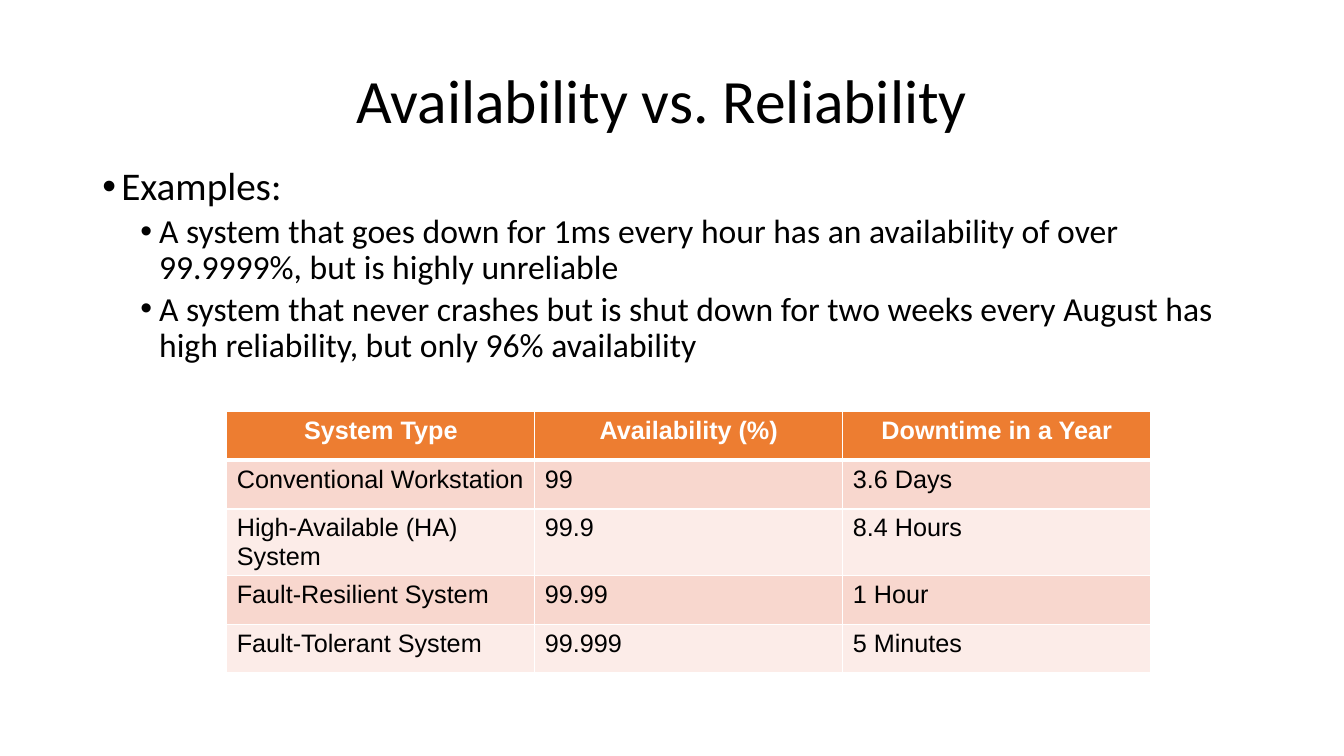
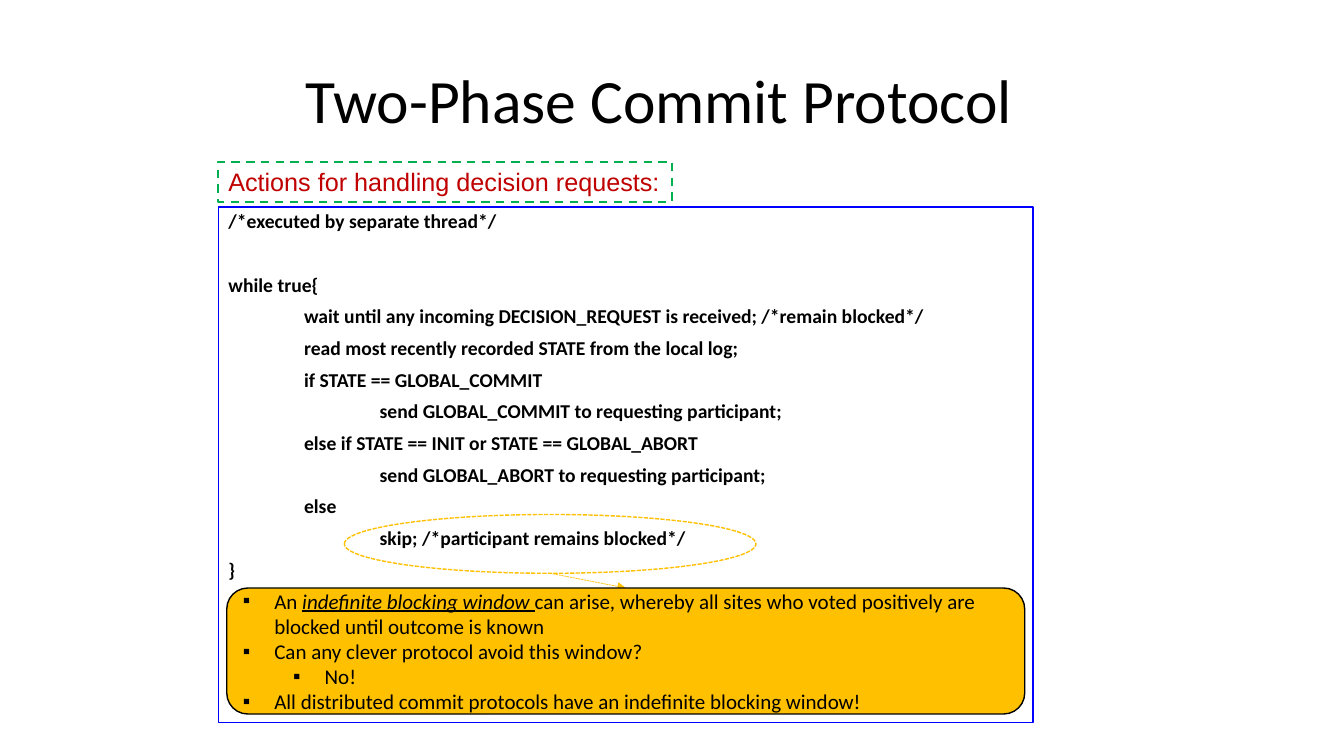
import lxml.etree
import pptx
import pptx.dml.color
import pptx.enum.dml
import pptx.enum.shapes
import pptx.enum.text
import pptx.oxml.ns
import pptx.util

PX = 9525  # EMU in one px: the slide is 1280 by 720
COLORS = {
    "text": "000000", "white": "FFFFFF", "header": "ED7D31",
    "band": "F8D7CE", "light band": "FCECE8", "frame": "0000FF",
    "label": "C00000", "label frame": "00B050", "highlight": "FFC000",
}
FONTS = {
    "title": {"name": "Calibri", "size": 44},
    "list": {"name": "Calibri", "size": 28},
    "sublist": {"name": "Calibri", "size": 24},
    "code": {"name": "Calibri", "size": 14, "bold": True},
    "callout": {"name": "Calibri", "size": 15},
    "label": {"name": "Arial", "size": 18, "color": "label"},
    "header": {"name": "Arial", "size": 18, "bold": True, "color": "white"},
    "cell": {"name": "Arial", "size": 18, "bold": False},
}
ALIGN = pptx.enum.text.PP_ALIGN
ANCHOR = pptx.enum.text.MSO_ANCHOR
FIT = pptx.enum.text.MSO_AUTO_SIZE
SHAPE = pptx.enum.shapes.MSO_SHAPE
DASH = pptx.enum.dml.MSO_LINE


def rgb(color):
    return pptx.dml.color.RGBColor.from_string(COLORS[color])


def add_xml(parent, tag, **attributes):
    return lxml.etree.SubElement(parent, pptx.oxml.ns.qn(tag), attributes)


def set_all(target, values):
    for name, value in values.items():
        setattr(target, name, value)


class Deck:
    """Holds the shared style and the slide being built."""

    def __init__(self):
        self.presentation = pptx.Presentation()
        self.presentation.slide_width = 1280 * PX
        self.presentation.slide_height = 720 * PX
        self.slide = None

    def place(self, shape, box):
        set_all(shape, {side: length * PX for side, length
                        in zip(("left", "top", "width", "height"), box)})

    def add_text(self, paragraph, runs, style, **extra):
        """Fill a paragraph with a string or with (text, format) pairs."""
        for text, changes in [(runs, {})] if isinstance(runs, str) else runs:
            run = paragraph.add_run()
            run.text = text
            font = {"color": "text", **FONTS[style], **changes}
            run.font.color.rgb = rgb(font.pop("color"))
            font["size"] = pptx.util.Pt(font["size"])
            set_all(run.font, font)
        set_all(paragraph, extra)

    def indent(self, paragraph, left, hang=0, bullet=None):
        properties = paragraph._p.get_or_add_pPr()
        properties.set("marL", str(left * PX))
        properties.set("indent", str(-hang * PX))
        if bullet:
            add_xml(properties, "a:buFont", typeface="Arial")
            add_xml(properties, "a:buChar", char=bullet)
        else:
            add_xml(properties, "a:buNone")

    def paragraphs(self, frame, items, styles, base, step, hang=0,
                   bullet=None, spacing=1.0, gaps=(0, 0), align=ALIGN.LEFT):
        """Add (level, runs[, gap]) items; styles and gaps go by level."""
        for number, (level, runs, *gap) in enumerate(items):
            paragraph = frame.add_paragraph() if number else frame.paragraphs[0]
            paragraph.level = level
            self.indent(paragraph, base + step * level, hang, bullet)
            before = (gap or [gaps[min(level, 1)]])[0] if number else 0
            self.add_text(paragraph, runs, styles[min(level, len(styles) - 1)],
                          alignment=align, line_spacing=spacing,
                          space_before=pptx.util.Pt(before))

    def start(self, title, left, width):
        layout = self.presentation.slide_layouts[1]
        self.slide = self.presentation.slides.add_slide(layout)
        heading = self.slide.shapes.title
        self.place(heading, (left, 29, width, 139))
        set_all(heading.text_frame, {"auto_size": FIT.NONE, "word_wrap": True,
                                     "vertical_anchor": ANCHOR.MIDDLE})
        self.add_text(heading.text_frame.paragraphs[0], title, "title",
                      alignment=ALIGN.CENTER, line_spacing=0.9)

    def body(self, box, items, styles, **layout):
        body = self.slide.placeholders[1]
        self.place(body, box)
        set_all(body.text_frame, {"auto_size": FIT.NONE, "word_wrap": True,
                                  "vertical_anchor": ANCHOR.TOP})
        self.paragraphs(body.text_frame, items, styles, spacing=0.9, **layout)
        return body

    def outline(self, line, color, weight, dash=None):
        line.color.rgb = rgb(color)
        set_all(line, {"width": pptx.util.Pt(weight), "dash_style": dash})

    def shape(self, kind, box, line, fill=None):
        shape = self.slide.shapes.add_shape(kind, *(n * PX for n in box))
        shape.shadow.inherit = False
        if fill:
            shape.fill.solid()
            shape.fill.fore_color.rgb = rgb(fill)
        else:
            shape.fill.background()
        self.outline(shape.line, *line)
        shape.text_frame.word_wrap = True
        return shape

    def arrow(self, start, end, line):
        arrow = self.slide.shapes.add_connector(
            pptx.enum.shapes.MSO_CONNECTOR.STRAIGHT,
            *(n * PX for n in start + end))
        self.outline(arrow.line, *line)
        properties = arrow._element.spPr
        add_xml(properties.find(pptx.oxml.ns.qn("a:ln")), "a:tailEnd",
                type="triangle")
        add_xml(properties, "a:effectLst")

    def borders(self, cell, bottom):
        properties = cell._tc.get_or_add_tcPr()
        for side, weight in zip("LRTB", (1, 1, 1, bottom)):
            border = add_xml(properties, f"a:ln{side}",
                             w=str(int(pptx.util.Pt(weight))))
            add_xml(add_xml(border, "a:solidFill"), "a:srgbClr",
                    val=COLORS["white"])

    def table(self, box, rows):
        table = self.slide.shapes.add_table(
            len(rows), len(rows[0]), *(n * PX for n in box)).table
        for r, row in enumerate(rows):
            header = r == 0
            fill = "header" if header else ("light band", "band")[r % 2]
            for c, text in enumerate(row):
                cell = table.cell(r, c)
                self.borders(cell, 3 if header else 1)
                cell.fill.solid()
                cell.fill.fore_color.rgb = rgb(fill)
                self.add_text(cell.text_frame.paragraphs[0], text,
                              "header" if header else "cell",
                              alignment=ALIGN.CENTER if header else ALIGN.LEFT)


def availability_slide(deck):
    deck.start("Availability vs. Reliability", 88, 1085)
    examples = [
        (0, "Examples:"),
        (1, "A system that goes down for 1ms every hour has an availability "
            "of over 99.9999%, but is highly unreliable"),
        (1, "A system that never crashes but is shut down for two weeks every "
            "August has high reliability, but only 96% availability"),
    ]
    deck.body((88, 154, 1085, 528), examples, ("list", "sublist"),
              base=18, step=36, hang=18, bullet="•", gaps=(7.5, 3.8))
    deck.table((216, 392, 880, 232), [
        ("System Type", "Availability (%)", "Downtime in a Year"),
        ("Conventional Workstation", "99", "3.6 Days"),
        ("High-Available (HA) System", "99.9", "8.4 Hours"),
        ("Fault-Resilient System", "99.99", "1 Hour"),
        ("Fault-Tolerant System", "99.999", "5 Minutes"),
    ])


def commit_slide(deck):
    deck.start("Two-Phase Commit Protocol", 184, 888)

    # Pseudocode: the level is the depth of nesting
    code = [
        (0, "/*executed by separate thread*/"),
        (0, "while true{", 30),
        (1, "wait until any incoming DECISION_REQUEST is received; "
            "/*remain blocked*/"),
        (1, "read most recently recorded STATE from the local log;"),
        (1, "if STATE == GLOBAL_COMMIT"),
        (2, "send GLOBAL_COMMIT to requesting participant;"),
        (1, "else if STATE == INIT or STATE == GLOBAL_ABORT"),
        (2, "send GLOBAL_ABORT to requesting participant;"),
        (1, "else"),
        (2, "skip; /*participant remains blocked*/"),
        (0, "}"),
    ]
    listing = deck.body((208, 197, 776, 491), code, ("code",), base=0, step=72,
                        gaps=(7.5, 7.5), align=ALIGN.JUSTIFY)
    deck.outline(listing.line, "frame", 1)

    # Label above the listing
    label = deck.shape(SHAPE.RECTANGLE, (208, 154, 432, 38),
                       ("label frame", 1.5, DASH.DASH))
    set_all(label.text_frame, {"auto_size": FIT.SHAPE_TO_FIT_TEXT,
                               "vertical_anchor": ANCHOR.TOP})
    deck.add_text(label.text_frame.paragraphs[0],
                  "Actions for handling decision requests:", "label",
                  alignment=ALIGN.LEFT)

    # Blocked step and its callout
    deck.shape(SHAPE.OVAL, (328, 490, 392, 56),
               ("highlight", 1, DASH.SQUARE_DOT))
    deck.arrow((524, 546), (596, 560), ("highlight", 0.5, DASH.SQUARE_DOT))
    callout = deck.shape(SHAPE.ROUNDED_RECTANGLE, (216, 560, 760, 120),
                         ("text", 1), "highlight")
    callout.text_frame.vertical_anchor = ANCHOR.MIDDLE
    remarks = [
        (0, [("An ", {}),
             ("indefinite blocking window ", {"italic": True, "underline": True}),
             ("can arise, whereby all sites who voted positively are blocked "
              "until outcome is known", {})]),
        (0, "Can any clever protocol avoid this window?"),
        (1, "No!"),
        (0, "All distributed commit protocols have an indefinite blocking "
            "window!"),
    ]
    deck.paragraphs(callout.text_frame, remarks, ("callout",), base=30, step=48,
                    hang=30, bullet="▪")


def main():
    deck = Deck()
    availability_slide(deck)
    commit_slide(deck)
    deck.presentation.save("out.pptx")


if __name__ == "__main__":
    main()
